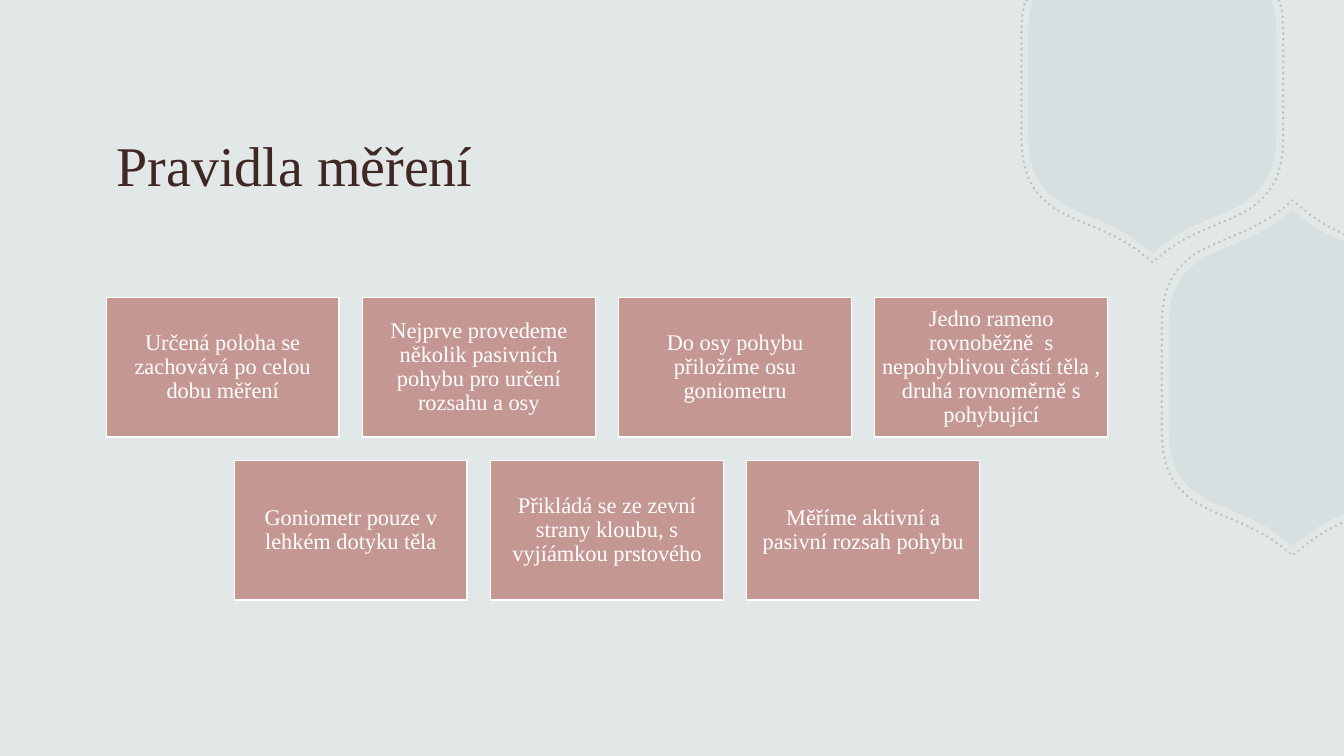
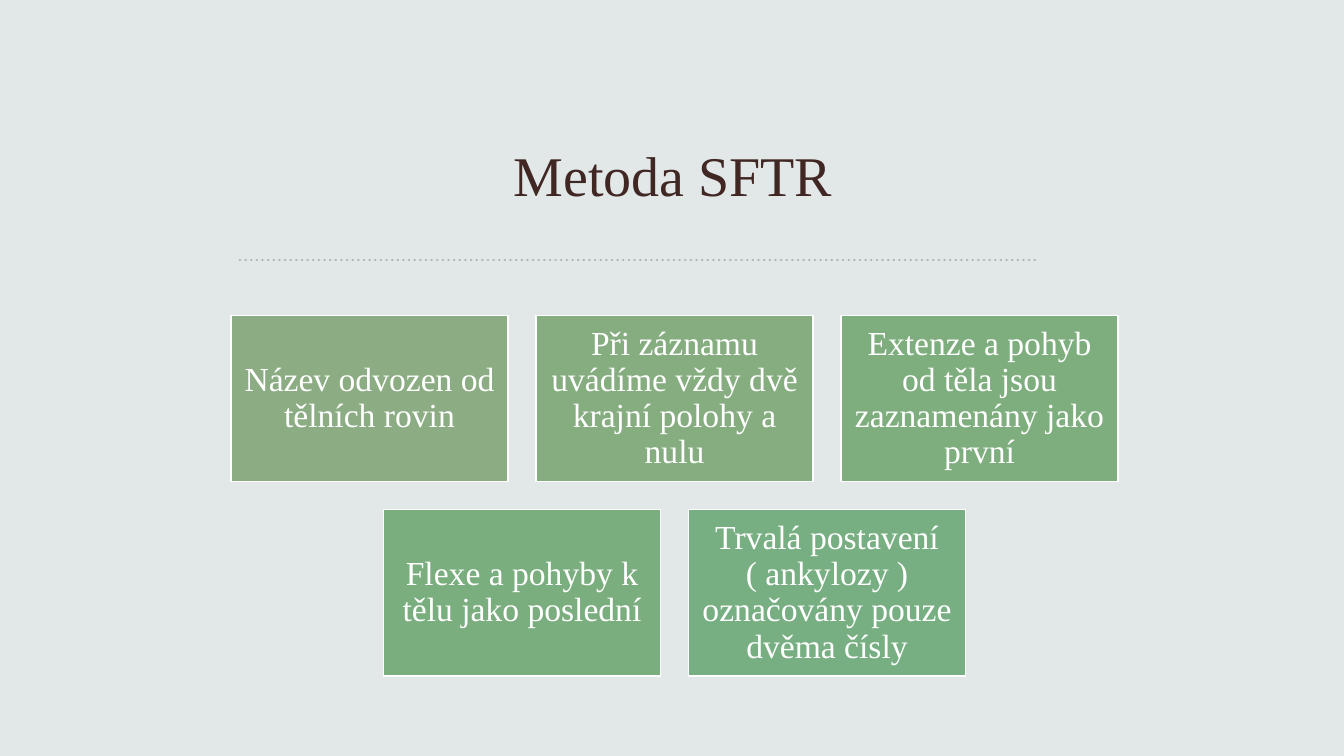
from lxml import etree
from pptx import Presentation
from pptx.dml.color import RGBColor
from pptx.enum.dml import MSO_LINE
from pptx.enum.shapes import MSO_CONNECTOR, MSO_SHAPE
from pptx.enum.text import MSO_ANCHOR, PP_ALIGN
from pptx.oxml.ns import qn
from pptx.util import Inches, Pt

SLIDE_W, SLIDE_H = 13.33, 7.5
FONT = "Times New Roman"
PAPER = RGBColor(0xE2, 0xE7, 0xE8)
MIST = RGBColor(0xA2, 0xB2, 0xB5)
WINE = RGBColor(0x41, 0x27, 0x24)
WHITE = RGBColor(0xFF, 0xFF, 0xFF)
ROSE = RGBColor(0xC4, 0x97, 0x92)
GREENS = [
    RGBColor(0x8C, 0xAD, 0x83),
    RGBColor(0x86, 0xAD, 0x80),
    RGBColor(0x7E, 0xAE, 0x7E),
    RGBColor(0x7B, 0xAE, 0x7F),
    RGBColor(0x78, 0xAF, 0x82),
]
LEFT, CENTER = PP_ALIGN.LEFT, PP_ALIGN.CENTER
MIDDLE = MSO_ANCHOR.MIDDLE
RECTANGLE = MSO_SHAPE.RECTANGLE
STRAIGHT = MSO_CONNECTOR.STRAIGHT
DOTTED = MSO_LINE.ROUND_DOT

# Card proportions, as shares of the card width
CARD_HEIGHT, CARD_GAP = 0.6, 0.1

# Badge outline around its centre: a step of one point is a line,
# a step of three points is a Bézier curve
FLANK = [
    [(-1.23, 0.31)],
    [(-1.23, 0.48)],
    [(-1.23, 0.84), (-1.13, 1.02), (-0.91, 1.17)],
    [(-0.68, 1.31), (-0.38, 1.37), (-0.11, 1.58)],
    [(0, 1.67)],
]
LEFT_HALF = [
    [(-1.18, -0.84)],
    [(-1.19, -0.81)],
    [(-1.22, -0.72), (-1.23, -0.61), (-1.23, -0.48)],
    [(-1.23, -0.38)],
    [(-1.23, -0.08)],
    [(-1.23, 0.08)],
] + FLANK
LOWER_HALF = [[(-1.23, 0.08)]] + FLANK + [
    [(0.11, 1.58)],
    [(0.18, 1.52), (0.25, 1.48), (0.31, 1.44)],
    [(0.51, 1.35)],
]
UPPER_CENTER, SIDE_CENTER = (11.43, 0.84), (12.82, 3.75)
OUTLINE_SCALE = 1.055

RULES = [
    [
        "Určená poloha se zachovává po celou dobu měření",
        "Nejprve provedeme několik pasivních pohybu pro určení rozsahu a osy",
        "Do osy pohybu přiložíme osu goniometru",
        "Jedno rameno rovnoběžně  s nepohyblivou částí těla , "
        "druhá rovnoměrně s pohybující",
    ],
    [
        "Goniometr pouze v lehkém dotyku těla",
        "Přikládá se ze zevní strany kloubu, s vyjíámkou prstového",
        "Měříme aktivní a pasivní rozsah pohybu",
    ],
]
METHOD = [
    [
        "Název odvozen od tělních rovin",
        "Při záznamu uvádíme vždy dvě krajní polohy a nulu",
        "Extenze a pohyb od těla jsou zaznamenány jako první",
    ],
    [
        "Flexe a pohyby k tělu jako poslední",
        "Trvalá postavení ( ankylozy ) označovány pouze dvěma čísly",
    ],
]


def add_slide(prs):
    slide = prs.slides.add_slide(prs.slide_layouts[6])
    slide.background.fill.solid()
    slide.background.fill.fore_color.rgb = PAPER
    return slide


def write(shape, text, size, color, align):
    frame = shape.text_frame
    frame.word_wrap = True
    frame.vertical_anchor = MIDDLE
    frame.text = text
    paragraph = frame.paragraphs[0]
    paragraph.alignment = align
    font = paragraph.runs[0].font
    font.name, font.size, font.color.rgb = FONT, Pt(size), color
    return paragraph


def add_title(slide, text, left, top, width, height, align=LEFT):
    box = slide.shapes.add_textbox(*map(Inches, (left, top, width, height)))
    write(box, text, 40, WINE, align)


def add_card(slide, text, left, top, width, fill, size, inset):
    card = slide.shapes.add_shape(
        RECTANGLE, *map(Inches, (left, top, width, width * CARD_HEIGHT)))
    card.shadow.inherit = False
    card.fill.solid()
    card.fill.fore_color.rgb = fill
    card.line.color.rgb = WHITE
    card.line.width = Pt(1)
    frame = card.text_frame
    frame.margin_left = frame.margin_right = Inches(inset)
    frame.margin_top = frame.margin_bottom = Inches(inset)
    write(card, text, size, WHITE, CENTER).line_spacing = 0.9


def add_card_rows(slide, rows, center, top, width, fills, size, inset):
    """Lay out rows of equal cards, each row centred on the same axis."""
    gap = width * CARD_GAP
    remaining_fills = iter(fills)
    for row_index, texts in enumerate(rows):
        row_width = len(texts) * (width + gap) - gap
        row_top = top + row_index * (width * CARD_HEIGHT + gap)
        for column, text in enumerate(texts):
            left = center - row_width / 2 + column * (width + gap)
            add_card(slide, text, left, row_top, width,
                     next(remaining_fills), size, inset)


def dot_line(line):
    line.color.rgb = MIST
    line.width = Pt(2)
    line.dash_style = DOTTED
    line._get_or_add_ln().set("cap", "rnd")


def add_divider(slide, left, right, y):
    divider = slide.shapes.add_connector(
        STRAIGHT, *map(Inches, (left, y, right, y)))
    dot_line(divider.line)
    etree.SubElement(divider._element.spPr, qn("a:effectLst"))


def set_opacity(shape, percent):
    for color in shape._element.spPr.iter(qn("a:srgbClr")):
        etree.SubElement(color, qn("a:alpha")).set("val", str(percent * 1000))


def mirrored_back(steps, x_sign, y_sign):
    """Return the mirrored steps in reverse, beginning at the last point."""
    points = [(x * x_sign, y * y_sign) for step in steps for x, y in step][::-1]
    back, position = [points[:1]], 1
    for step in steps[:0:-1]:
        back.append(points[position:position + len(step)])
        position += len(step)
    return back


def placed(steps, center, scale):
    """Move steps to a centre and keep them within the slide."""
    return [[(min(center[0] + scale * x, SLIDE_W),
              max(center[1] + scale * y, 0)) for x, y in step]
            for step in steps]


def add_path(slide, steps, close):
    start, *others = [(Inches(x), Inches(y)) for step in steps for x, y in step]
    builder = slide.shapes.build_freeform(*start)
    builder.add_line_segments(others, close=close)
    path_shape = builder.convert_to_shape()
    path_shape.shadow.inherit = False
    lines = iter(list(path_shape._element.spPr.iter(qn("a:lnTo"))))
    for step in steps[1:]:
        first, *rest = [next(lines) for _ in step]
        if rest:
            first.tag = qn("a:cubicBezTo")
            for line in rest:
                first.append(line[0])
                line.getparent().remove(line)
    return path_shape


def add_badge_fill(slide, steps, center):
    badge = add_path(slide, placed(steps, center, 1), close=True)
    badge.fill.solid()
    badge.fill.fore_color.rgb = MIST
    badge.line.fill.background()
    set_opacity(badge, 15)


def add_badge_outline(slide, steps, center):
    outline = add_path(slide, placed(steps, center, OUTLINE_SCALE), close=False)
    outline.fill.background()
    dot_line(outline.line)
    set_opacity(outline, 65)


def add_badges(slide):
    upper = LEFT_HALF + mirrored_back(LEFT_HALF, -1, 1)[1:]
    side = mirrored_back(LOWER_HALF, 1, -1) + LOWER_HALF
    for add_part in (add_badge_fill, add_badge_outline):
        add_part(slide, upper, UPPER_CENTER)
        add_part(slide, side, SIDE_CENTER)


def build_rules(prs):
    slide = add_slide(prs)
    add_badges(slide)
    add_title(slide, "Pravidla měření", 1.06, 1.05, 9.93, 1.16)
    add_card_rows(slide, RULES, center=6.02, top=2.95, width=2.31,
                  fills=[ROSE] * 7, size=16, inset=0.07)


def build_method(prs):
    slide = add_slide(prs)
    add_title(slide, "Metoda SFTR", 1.05, 1.03, 11.25, 1.4, CENTER)
    add_divider(slide, 2.38, 10.27, 2.58)
    add_card_rows(slide, METHOD, center=6.69, top=3.13, width=2.75,
                  fills=GREENS, size=24, inset=0.1)


def main():
    prs = Presentation()
    prs.slide_width, prs.slide_height = Inches(SLIDE_W), Inches(SLIDE_H)
    build_rules(prs)
    build_method(prs)
    prs.save("out.pptx")


if __name__ == "__main__":
    main()
